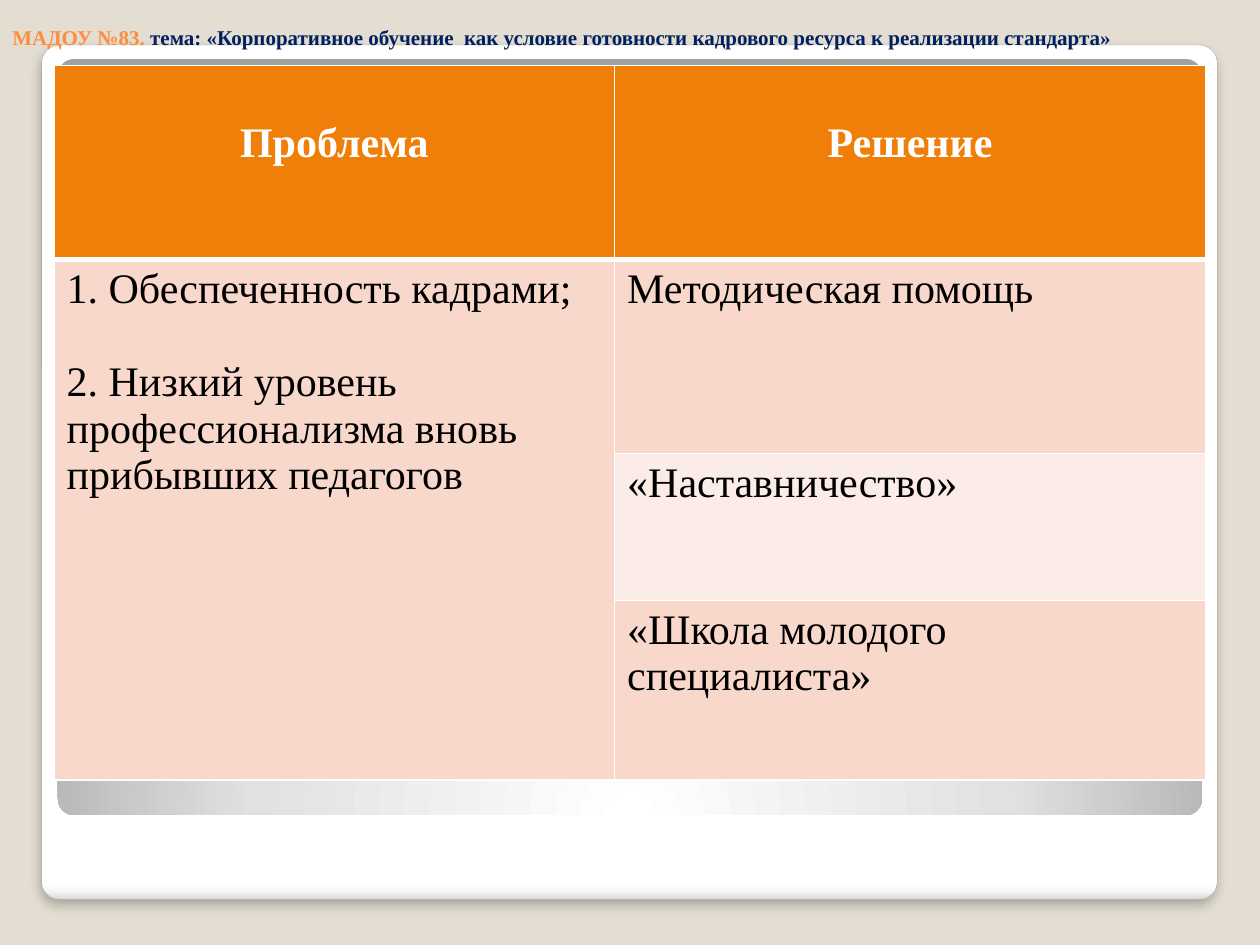
"""Build a slide with a table of staffing problems and their solutions."""
from dataclasses import dataclass

import lxml.etree
import pptx
import pptx.dml.color
import pptx.enum.shapes
import pptx.enum.text
import pptx.oxml
import pptx.oxml.ns
import pptx.util

Cm = pptx.util.Cm
Pt = pptx.util.Pt
FONT = "Times New Roman"
NAMESPACE = pptx.oxml.ns.nsdecls("a")
COLUMN_WIDTHS = (11.3, 11.91)
ROW_HEIGHTS = (3.91, 3.91, 2.97, 3.61)
HEADER_FILL = "F07F09"
BAND_FILLS = ("F9D8CC", "FCECE7")


@dataclass(frozen=True)
class Panel:
    left: float
    top: float
    width: float
    height: float
    stops: tuple
    direction: str
    line: str = ""
    effects: str = ""


@dataclass(frozen=True)
class Entry:
    row: int
    column: int
    paragraphs: tuple


PANELS = (
    Panel(0.84, 0.91, 23.7, 17.22,
          ((0, "FFFFFF"), (98, "FFFFFF"), (99, "F7F7F7"), (100, "DADADA")),
          '<a:lin ang="5400000" scaled="0"/>', "A4A4A4",
          '<a:outerShdw blurRad="76200" dist="50800" dir="5400000" algn="t" rotWithShape="0">'
          '<a:srgbClr val="000000"><a:alpha val="25000"/></a:srgbClr></a:outerShdw>'),
    Panel(1.17, 1.19, 23.06, 15.24,
          ((0, "FFFFFF"), (55, "E1E1E1"), (100, "A2A2A2")),
          '<a:path path="circle"><a:fillToRect l="50000" t="175000" r="50000" b="-75000"/></a:path>'),
)
ENTRIES = (
    Entry(0, 0, ("Проблема",)),
    Entry(0, 1, ("Решение",)),
    Entry(1, 0, ("1. Обеспеченность кадрами;",
                 "2. Низкий уровень профессионализма вновь прибывших педагогов")),
    Entry(1, 1, ("Методическая помощь",)),
    Entry(2, 1, ("«Наставничество»",)),
    Entry(3, 1, ("«Школа молодого специалиста»",)),
)
TITLE_RUNS = (
    ("МАДОУ №83. ", "FF8D3E"),
    ("тема: «Корпоративное обучение  как условие готовности кадрового ресурса к реализации стандарта»",
     "002060"),
)


def color(value: str) -> pptx.dml.color.RGBColor:
    return pptx.dml.color.RGBColor.from_string(value)


def add_run(paragraph, text: str, size: float, value: str, bold: bool) -> None:
    run = paragraph.add_run()
    run.text = text
    run.font.name = FONT
    run.font.size = Pt(size)
    run.font.bold = bold
    run.font.color.rgb = color(value)


def add_panel(slide, panel: Panel) -> None:
    shape = slide.shapes.add_shape(
        pptx.enum.shapes.MSO_SHAPE.ROUNDED_RECTANGLE,
        Cm(panel.left), Cm(panel.top), Cm(panel.width), Cm(panel.height))
    shape.adjustments[0] = 0.021
    shape.shadow.inherit = False
    if panel.line:
        shape.line.color.rgb = color(panel.line)
        shape.line.width = Pt(0.16)
    else:
        shape.line.fill.background()
    stops = "".join(f'<a:gs pos="{position * 1000}"><a:srgbClr val="{value}"/></a:gs>'
                    for position, value in panel.stops)
    properties = shape.element.spPr
    properties.find(pptx.oxml.ns.qn("a:prstGeom")).addnext(pptx.oxml.parse_xml(
        f'<a:gradFill {NAMESPACE} rotWithShape="1"><a:gsLst>{stops}</a:gsLst>'
        f'{panel.direction}</a:gradFill>'))
    if panel.effects:
        effect_list = properties.find(pptx.oxml.ns.qn("a:effectLst"))
        effect_list.append(pptx.oxml.parse_xml(
            panel.effects.replace("<a:outerShdw", f"<a:outerShdw {NAMESPACE}")))


def style_cell(cell, row: int) -> None:
    properties = cell._tc.get_or_add_tcPr()
    widths = {"L": 1, "R": 1, "T": 3 if row == 1 else 1, "B": 3 if row == 0 else 1}
    for side, width in widths.items():
        properties.append(pptx.oxml.parse_xml(
            f'<a:ln{side} {NAMESPACE} w="{Pt(width)}"><a:solidFill>'
            f'<a:srgbClr val="FFFFFF"/></a:solidFill></a:ln{side}>'))
    cell.fill.solid()
    cell.fill.fore_color.rgb = color(BAND_FILLS[(row - 1) % 2] if row else HEADER_FILL)


def fill_cell(cell, entry: Entry) -> None:
    header = entry.row == 0
    if header:
        cell.margin_top = Cm(1.1)
    for index, text in enumerate(entry.paragraphs):
        frame = cell.text_frame
        paragraph = frame.add_paragraph() if index else frame.paragraphs[0]
        if index:
            paragraph.space_before = Pt(27)
        if header:
            paragraph.alignment = pptx.enum.text.PP_ALIGN.CENTER
        add_run(paragraph, text, 24, "FFFFFF" if header else "000000", header)


def add_problem_table(slide) -> None:
    table = slide.shapes.add_table(
        len(ROW_HEIGHTS), len(COLUMN_WIDTHS), Cm(1.09), Cm(1.32),
        Cm(sum(COLUMN_WIDTHS)), Cm(sum(ROW_HEIGHTS))).table
    for column, width in zip(table.columns, COLUMN_WIDTHS):
        column.width = Cm(width)
    for index, height in enumerate(ROW_HEIGHTS):
        table.rows[index].height = Cm(height)
        for cell in table.rows[index].cells:
            style_cell(cell, index)
    table.cell(1, 0).merge(table.cell(3, 0))
    for entry in ENTRIES:
        fill_cell(table.cell(entry.row, entry.column), entry)


def add_title(slide) -> None:
    frame = slide.shapes.add_textbox(0, 0, Cm(25.4), Cm(1.6)).text_frame
    frame.word_wrap = True
    frame.vertical_anchor = pptx.enum.text.MSO_ANCHOR.BOTTOM
    frame.margin_bottom = Cm(0.6)
    for text, value in TITLE_RUNS:
        add_run(frame.paragraphs[0], text, 12, value, True)


def main() -> None:
    presentation = pptx.Presentation()
    presentation.slide_width = Cm(25.4)
    presentation.slide_height = Cm(19.05)
    slide = presentation.slides.add_slide(presentation.slide_layouts[6])
    slide.background.fill.solid()
    slide.background.fill.fore_color.rgb = color("E3DED1")
    for panel in PANELS:
        add_panel(slide, panel)
    add_problem_table(slide)
    add_title(slide)
    presentation.save("out.pptx")


if __name__ == "__main__":
    main()
